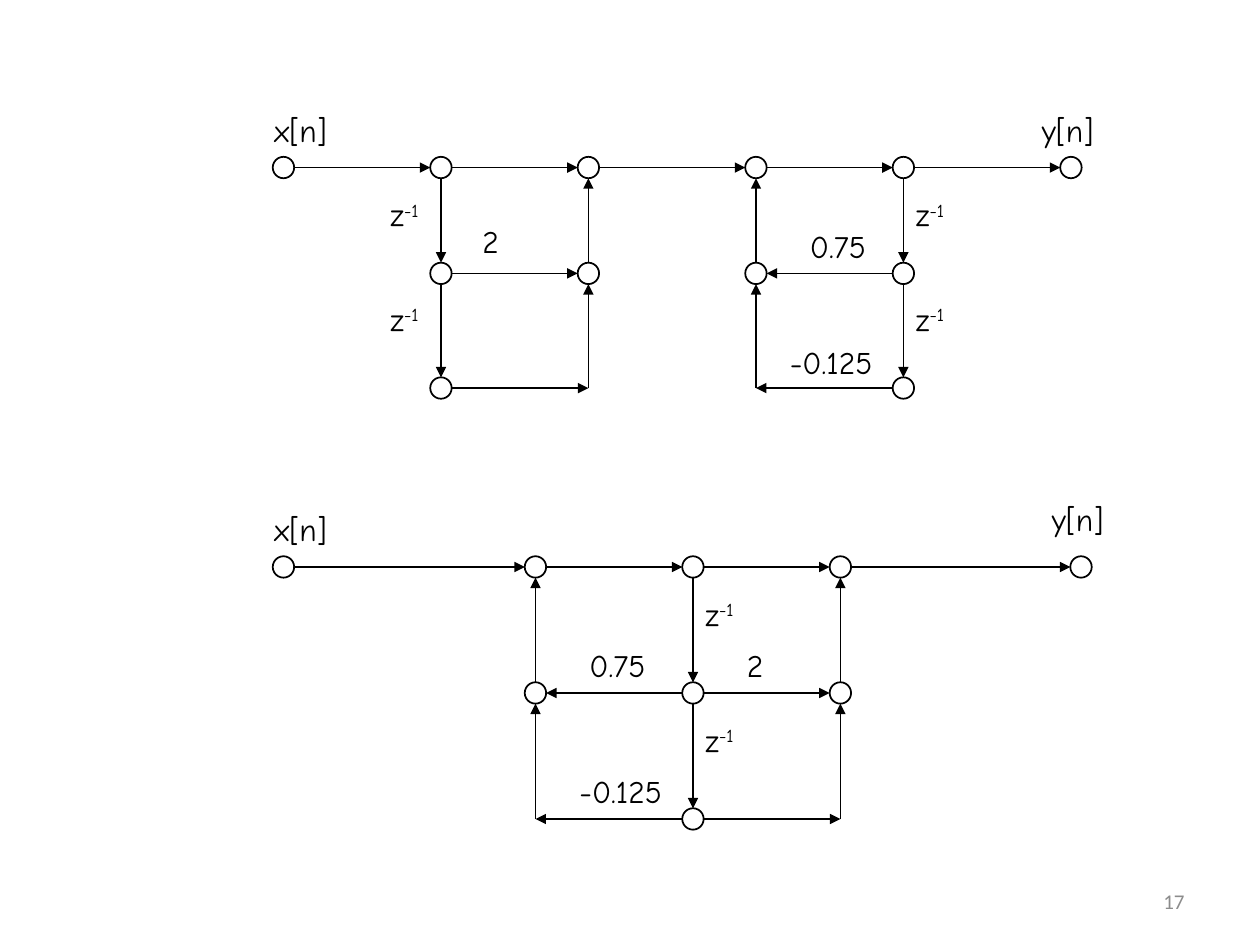
from lxml.etree import SubElement
from pptx import Presentation
from pptx.dml.color import RGBColor
from pptx.enum.shapes import MSO_CONNECTOR, MSO_SHAPE
from pptx.enum.text import MSO_ANCHOR, MSO_AUTO_SIZE, PP_ALIGN
from pptx.oxml.ns import qn
from pptx.util import Inches, Pt

COLORS = {"ink": "000000", "paper": "FFFFFF", "muted": "8C8C8C"}
DIAMETER = 0.17


class FlowGraph:
    """Draws signal flow graphs on one slide in a shared style."""

    label_frame = {"word_wrap": False, "auto_size": MSO_AUTO_SIZE.SHAPE_TO_FIT_TEXT}
    label_font = {"name": "Comic Neue", "size": Pt(18)}
    number_frame = {"word_wrap": True, "vertical_anchor": MSO_ANCHOR.MIDDLE}
    number_font = {"name": "Calibri", "size": Pt(12)}

    def __init__(self, slide):
        self.slide = slide

    def apply(self, target, values):
        for name, value in values.items():
            setattr(target, name, value)

    def color(self, name):
        return RGBColor.from_string(COLORS[name])

    def outline(self, line):
        line.color.rgb = self.color("ink")
        line.width = Pt(1)

    def node(self, x, y):
        size = Inches(DIAMETER)
        circle = self.slide.shapes.add_shape(
            MSO_SHAPE.OVAL, Inches(x - DIAMETER / 2), Inches(y - DIAMETER / 2), size, size)
        circle.shadow.inherit = False
        circle.fill.solid()
        circle.fill.fore_color.rgb = self.color("paper")
        self.outline(circle.line)

    def branch(self, start, end, start_gap, end_gap):
        (x1, y1), (x2, y2) = start, end
        across, down = (x2 > x1) - (x2 < x1), (y2 > y1) - (y2 < y1)
        arrow = self.slide.shapes.add_connector(
            MSO_CONNECTOR.STRAIGHT,
            Inches(x1 + across * start_gap), Inches(y1 + down * start_gap),
            Inches(x2 - across * end_gap), Inches(y2 - down * end_gap))
        self.outline(arrow.line)
        properties = arrow._element.spPr
        SubElement(properties.find(qn("a:ln")), qn("a:tailEnd"), type="triangle")
        SubElement(properties, qn("a:effectLst"))

    def text(self, place, words, frame_values, font_values, color, superscript=""):
        box = self.slide.shapes.add_textbox(*map(Inches, place))
        self.apply(box.text_frame, frame_values)
        paragraph = box.text_frame.paragraphs[0]
        for part in filter(None, (words, superscript)):
            run = paragraph.add_run()
            run.text = part
            self.apply(run.font, font_values)
            run.font.color.rgb = self.color(color)
        if superscript:
            run._r.get_or_add_rPr().set("baseline", "30000")
        return paragraph

    def label(self, x, y, width, words, superscript=""):
        self.text((x, y, width, 0.4), words, self.label_frame, self.label_font,
                  "ink", superscript)

    def delay(self, x, y):
        self.label(x, y, 0.48, "z", "-1")

    def page_number(self, number):
        paragraph = self.text((7.17, 6.95, 2.33, 0.4), number, self.number_frame,
                              self.number_font, "muted")
        paragraph.alignment = PP_ALIGN.RIGHT

    def graph(self, columns, rows, nodes, branches, labels, delays):
        """Place nodes named by column letter and row digit, then branches and labels."""
        def point(name):
            return columns[name[0]], rows[int(name[1]) - 1]

        def gap(name):
            return DIAMETER / 2 if name in nodes else 0

        for name in nodes:
            self.node(*point(name))
        for start, end in map(str.split, branches):
            self.branch(point(start), point(end), gap(start), gap(end))
        for label in labels:
            self.label(*label)
        for delay in delays:
            self.delay(*delay)


def main():
    deck = Presentation()
    deck.slide_width, deck.slide_height = Inches(10), Inches(7.5)
    flow = FlowGraph(deck.slides.add_slide(deck.slide_layouts[6]))

    direct_form_one = {
        "columns": dict(a=2.25, b=3.5, c=4.67, d=6, e=7.17, f=8.5),
        "rows": [1.33, 2.17, 3.08],
        "nodes": "a1 b1 c1 d1 e1 f1 b2 c2 d2 e2 b3 e3".split(),
        "branches": ["a1 b1", "b1 c1", "c1 d1", "d1 e1", "e1 f1", "b2 c2", "e2 d2",
                     "b1 b2", "b2 b3", "b3 c3", "c3 c2", "c2 c1",
                     "e1 e2", "e2 e3", "e3 d3", "d3 d2", "d2 d1"],
        "labels": [(2.08, 0.83, 0.67, "x[n]"), (8.17, 0.83, 0.65, "y[n]"),
                   (3.73, 1.71, 0.35, "2"), (6.33, 1.75, 0.72, "0.75"),
                   (6.17, 2.67, 0.94, "-0.125")],
        "delays": [(x, y) for x in (3, 7.17) for y in (1.5, 2.33)],
    }
    direct_form_two = {
        "columns": dict(a=2.25, b=4.25, c=5.5, d=6.67, e=8.58),
        "rows": [4.5, 5.5, 6.5],
        "nodes": "a1 b1 c1 d1 e1 b2 c2 d2 c3".split(),
        "branches": ["a1 b1", "b1 c1", "c1 d1", "d1 e1", "c1 c2", "c2 c3",
                     "c2 b2", "c3 b3", "b3 b2", "b2 b1",
                     "c2 d2", "c3 d3", "d3 d2", "d2 d1"],
        "labels": [(2.08, 4, 0.67, "x[n]"), (8.25, 3.92, 0.65, "y[n]"),
                   (5.83, 5.08, 0.35, "2"), (4.58, 5.08, 0.72, "0.75"),
                   (4.5, 6.08, 0.94, "-0.125")],
        "delays": [(5.5, y) for y in (4.67, 5.67)],
    }
    for form in (direct_form_one, direct_form_two):
        flow.graph(**form)
    flow.page_number("17")
    deck.save("out.pptx")


if __name__ == "__main__":
    main()
